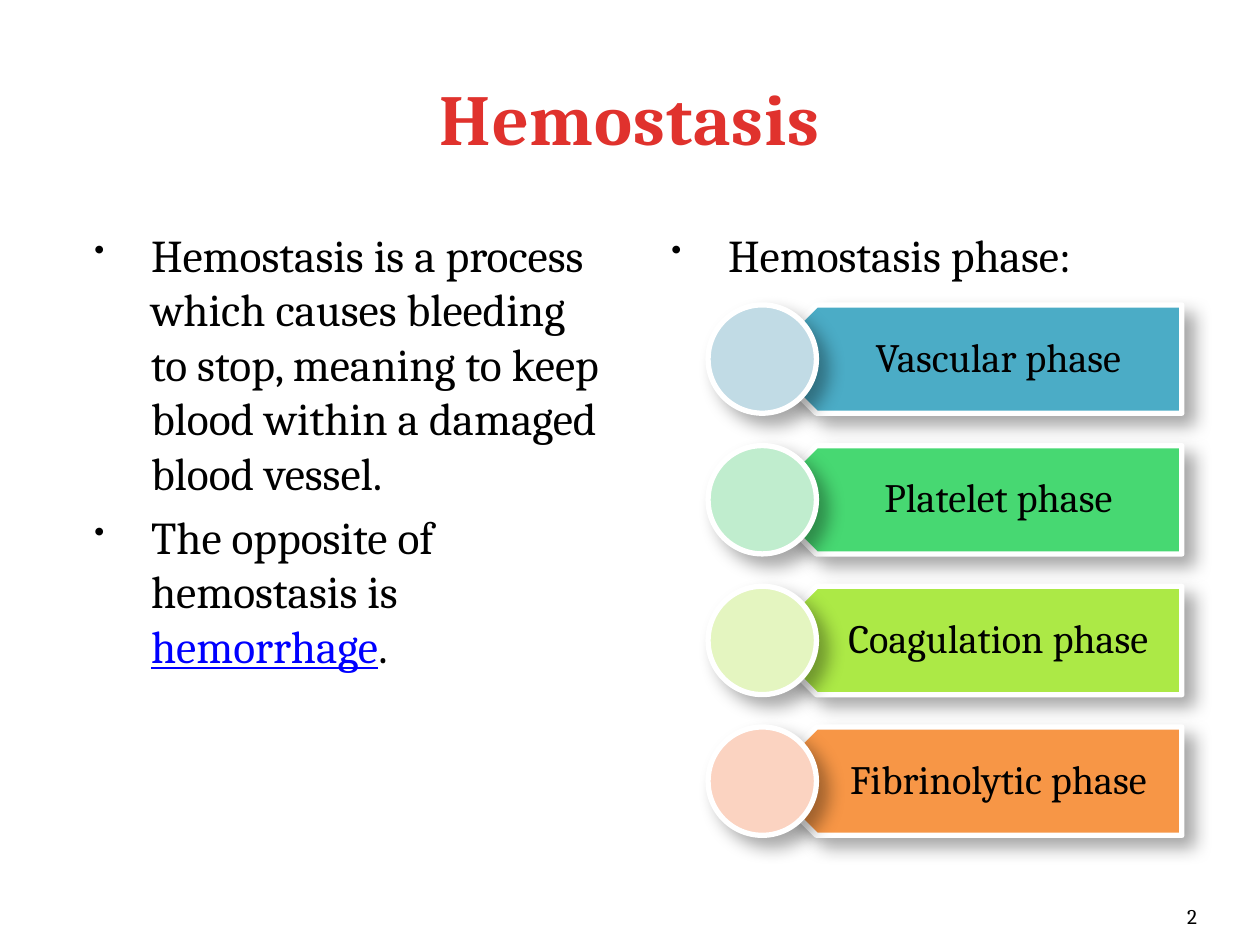
from dataclasses import dataclass

import pptx
import pptx.dml.color
import pptx.enum.shapes
import pptx.enum.text
import pptx.oxml.ns
import pptx.util
from lxml import etree

Inches = pptx.util.Inches
Pt = pptx.util.Pt
RGB = pptx.dml.color.RGBColor.from_string
Align = pptx.enum.text.PP_ALIGN
Anchor = pptx.enum.text.MSO_ANCHOR
Preset = pptx.enum.shapes.MSO_SHAPE
qn = pptx.oxml.ns.qn


@dataclass(frozen=True)
class Theme:
    font: str = "Cambria"
    title: str = "E0322D"
    text: str = "000000"
    emphasis: str = "0000FF"
    outline: str = "FFFFFF"
    title_size: float = 41
    body_size: float = 26
    phase_size: float = 23
    number_size: float = 12


@dataclass(frozen=True)
class Span:
    text: str
    emphasised: bool = False


@dataclass(frozen=True)
class Phase:
    name: str
    arrow_color: str
    circle_color: str


THEME = Theme()
PHASES = [
    Phase("Vascular phase", "4BACC6", "C1DBE5"),
    Phase("Platelet phase", "47D872", "C0EDCE"),
    Phase("Coagulation phase", "ACE946", "E4F5C0"),
    Phase("Fibrinolytic phase", "F79646", "FBD3C1"),
]
DEFINITION = [
    [Span("Hemostasis is a process which causes bleeding to stop, "
          "meaning to keep blood within a damaged blood vessel.")],
    [Span("The opposite of hemostasis is "), Span("hemorrhage", True), Span(".")],
]
PHASE_HEADING = [[Span("Hemostasis phase:")]]

FIRST_TOP, LAST_TOP = 2.42, 5.77
ROW_HEIGHT = 0.86


def add_text_frame(slide, left: float, top: float, width: float, height: float,
                   anchor=Anchor.TOP, insets=(0.1, 0.05, 0.1, 0.05)):
    box = slide.shapes.add_textbox(Inches(left), Inches(top), Inches(width), Inches(height))
    frame = box.text_frame
    frame.word_wrap = True
    frame.vertical_anchor = anchor
    (frame.margin_left, frame.margin_top,
     frame.margin_right, frame.margin_bottom) = map(Inches, insets)
    return frame


def style_run(run, size: float, color: str = THEME.text) -> None:
    run.font.name = THEME.font
    run.font.size = Pt(size)
    run.font.color.rgb = RGB(color)


def write_line(frame, text: str, size: float, align, color: str = THEME.text):
    frame.text = text
    paragraph = frame.paragraphs[0]
    paragraph.alignment = align
    style_run(paragraph.runs[0], size, color)
    return paragraph


def add_bullet(paragraph) -> None:
    properties = paragraph._p.get_or_add_pPr()
    properties.set("marL", str(Inches(0.6)))
    properties.set("indent", str(Inches(-0.45)))
    color = etree.SubElement(properties, qn("a:buClr"))
    etree.SubElement(color, qn("a:srgbClr"), val=THEME.text)
    etree.SubElement(properties, qn("a:buSzPct"), val="65000")
    etree.SubElement(properties, qn("a:buChar"), char="•")


def write_bullets(frame, items: list[list[Span]]) -> None:
    for index, spans in enumerate(items):
        paragraph = frame.add_paragraph() if index else frame.paragraphs[0]
        add_bullet(paragraph)
        if index:
            paragraph.space_before = Pt(0.2 * THEME.body_size)
        for span in spans:
            run = paragraph.add_run()
            run.text = span.text
            style_run(run, THEME.body_size, THEME.emphasis if span.emphasised else THEME.text)
            if span.emphasised:
                run.font.underline = True


def add_raised_shape(slide, preset, left: float, top: float, width: float, color: str):
    shape = slide.shapes.add_shape(
        preset, Inches(left), Inches(top), Inches(width), Inches(ROW_HEIGHT))
    shape.fill.solid()
    shape.fill.fore_color.rgb = RGB(color)
    shape.line.color.rgb = RGB(THEME.outline)
    shape.line.width = Pt(3)
    # Soft shadow to the lower right
    shape.shadow.inherit = False
    effects = shape._element.spPr.find(qn("a:effectLst"))
    shadow = etree.SubElement(
        effects, qn("a:outerShdw"), blurRad=str(Pt(10.2)), dist=str(Pt(8)),
        dir="2700000", algn="tl", rotWithShape="0")
    shade = etree.SubElement(shadow, qn("a:srgbClr"), val="000000")
    etree.SubElement(shade, qn("a:alpha"), val="35000")
    return shape


def add_phase(slide, phase: Phase, top: float) -> None:
    arrow = add_raised_shape(slide, Preset.PENTAGON, 6.05, top, 3.33, phase.arrow_color)
    arrow.rotation = 180
    # The label stays upright in its own box over the turned arrow
    label = add_text_frame(slide, 6.27, top, 3.11, ROW_HEIGHT, Anchor.MIDDLE,
                           (0.38, 0.1, 0.18, 0.1))
    write_line(label, phase.name, THEME.phase_size, Align.CENTER).line_spacing = 0.9
    add_raised_shape(slide, Preset.OVAL, 5.62, top, ROW_HEIGHT, phase.circle_color)


def main() -> None:
    deck = pptx.Presentation()
    deck.slide_width, deck.slide_height = Inches(10), Inches(7.5)
    slide = deck.slides.add_slide(deck.slide_layouts[6])

    # Title
    title = add_text_frame(slide, 0.5, 0.3, 9, 1.25, Anchor.MIDDLE)
    heading = write_line(title, "Hemostasis", THEME.title_size, Align.CENTER, THEME.title).runs[0]
    heading.font.bold = True
    heading.font._element.set("spc", "50")

    # Two text columns
    for left, items in ((0.5, DEFINITION), (5.08, PHASE_HEADING)):
        write_bullets(add_text_frame(slide, left, 1.75, 4.42, 4.95), items)

    # Slide number
    number = add_text_frame(slide, 8.67, 7.02, 0.83, 0.4, Anchor.BOTTOM, (0, 0.05, 0, 0.05))
    write_line(number, "2", THEME.number_size, Align.RIGHT)

    # Phase list
    pitch = (LAST_TOP - FIRST_TOP) / (len(PHASES) - 1)
    for row, phase in enumerate(PHASES):
        add_phase(slide, phase, FIRST_TOP + row * pitch)

    deck.save("out.pptx")


if __name__ == "__main__":
    main()
